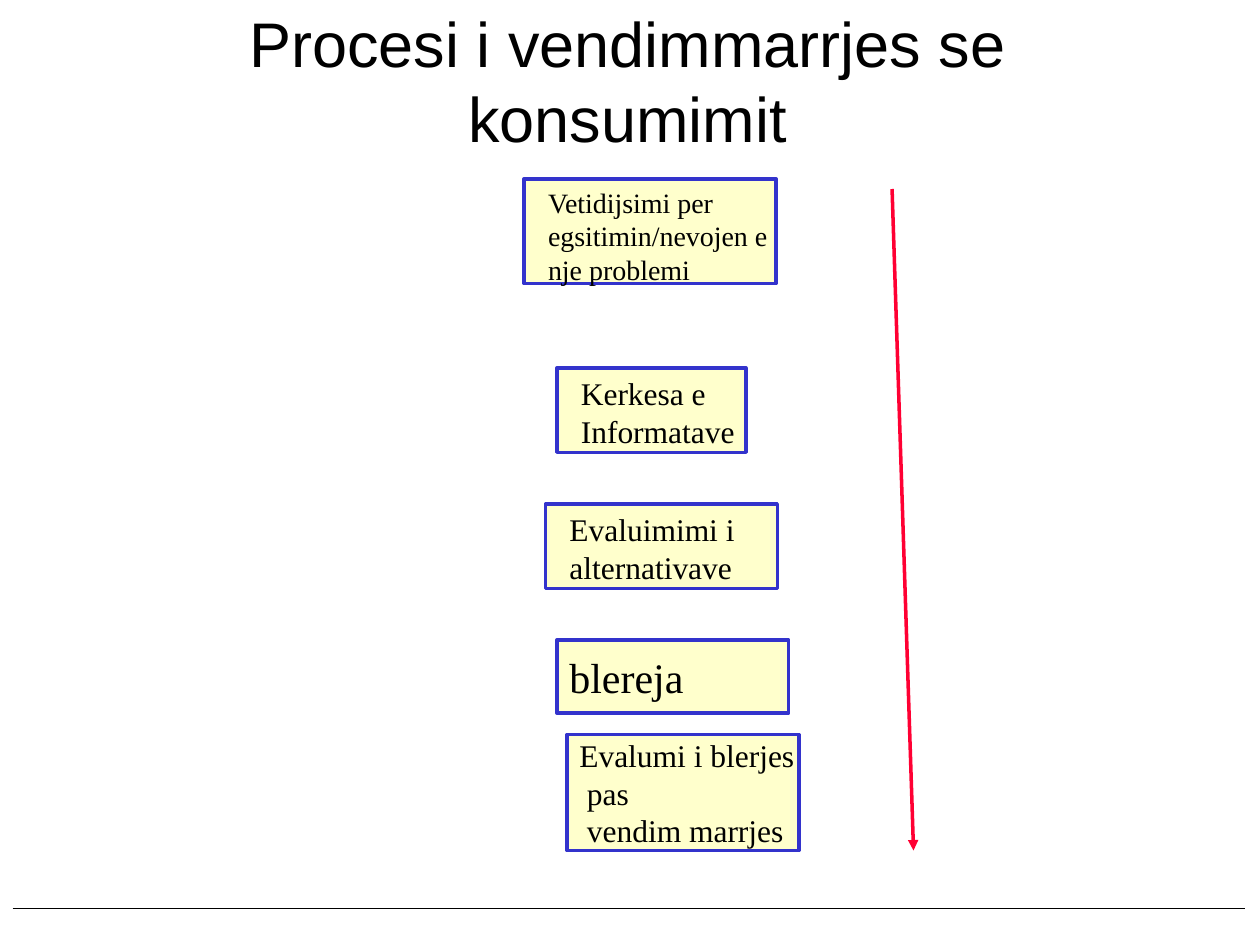
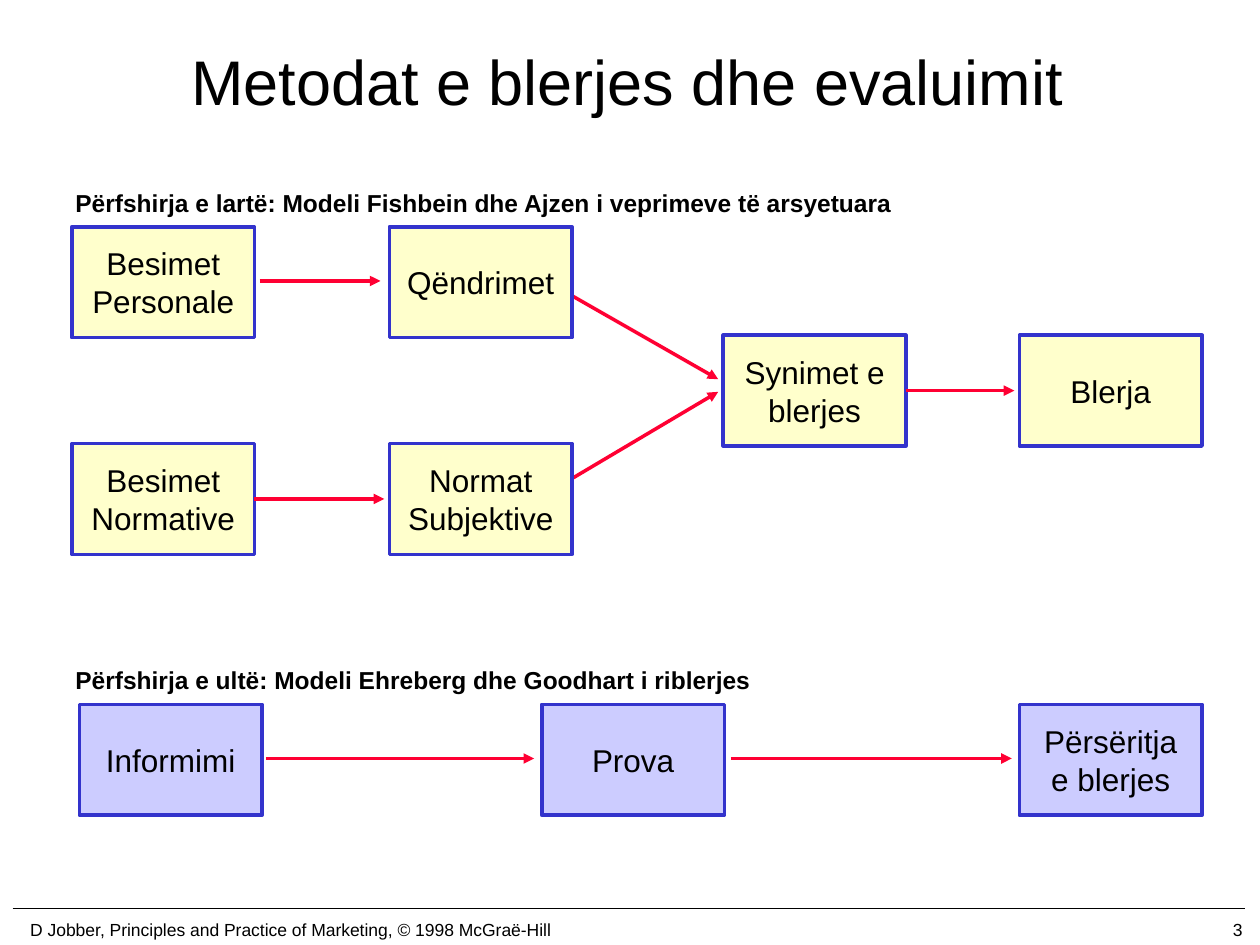
from lxml.etree import SubElement
from pptx import Presentation
from pptx.dml.color import RGBColor
from pptx.enum.shapes import MSO_CONNECTOR as Link, MSO_SHAPE as Shape
from pptx.enum.text import MSO_ANCHOR as Anchor, MSO_AUTO_SIZE as AutoSize, PP_ALIGN as Align
from pptx.oxml.ns import qn
from pptx.util import Inches, Pt

BLACK, RED, BLUE = "000000", "FF0033", "3333CC"
YELLOW, LILAC = "FFFFCC", "CCCCFF"
RIGHT_SIDE = 3
STEP_SIZE = (1.45, 0.88)


def colour(hex_value):
    return RGBColor.from_string(hex_value)


def inches(values):
    return [Inches(value) for value in values]


def apply(target, values):
    for name, value in values.items():
        setattr(target, name, value)


class Deck:
    def __init__(self):
        self.presentation = Presentation()
        apply(self.presentation, {"slide_width": Inches(10), "slide_height": Inches(7.5)})
        self.slide = None

    def add_slide(self, title):
        self.slide = self.presentation.slides.add_slide(self.presentation.slide_layouts[5])
        heading = self.slide.shapes.title
        self.place(heading, 0.73, 0.01, 8.5, 1.25)
        self.set_text(heading.text_frame, [title], size=36, align=Align.CENTER)

    def place(self, shape, *box):
        names = ("left", "top", "width", "height")
        apply(shape, dict(zip(names, inches(box))))

    def set_text(self, frame, lines, size=18, font="Arial", bold=False, align=Align.LEFT,
                 anchor=Anchor.MIDDLE, wrap=True, margins=(0.1, 0.05, 0.1, 0.05), indent=0):
        names = ("margin_left", "margin_top", "margin_right", "margin_bottom")
        apply(frame, dict(zip(names, inches(margins))))
        apply(frame, {"word_wrap": wrap, "auto_size": AutoSize.NONE, "vertical_anchor": anchor})
        for number, line in enumerate(lines):
            paragraph = frame.add_paragraph() if number else frame.paragraphs[0]
            paragraph.text = line
            paragraph.alignment = align
            if number and indent:
                paragraph._p.get_or_add_pPr().set("marL", str(Inches(indent)))
            apply(paragraph.font, {"size": Pt(size), "name": font, "bold": bold})
            paragraph.font.color.rgb = colour(BLACK)

    def label(self, text, box, **style):
        frame = self.slide.shapes.add_textbox(*inches(box)).text_frame
        self.set_text(frame, [text], wrap=False, **style)

    def box(self, lines, box, fill=YELLOW, **style):
        shape = self.slide.shapes.add_shape(Shape.RECTANGLE, *inches(box))
        shape.shadow.inherit = False
        shape.fill.solid()
        shape.fill.fore_color.rgb = colour(fill)
        shape.line.color.rgb = colour(BLUE)
        shape.line.width = Pt(2)
        self.set_text(shape.text_frame, lines, **style)
        return shape

    def line(self, start, end, stroke=BLACK, width=1):
        line = self.slide.shapes.add_connector(Link.STRAIGHT, *inches(start + end))
        line.line.color.rgb = colour(stroke)
        line.line.width = Pt(width)
        SubElement(line.element.spPr, qn("a:effectLst"))
        return line

    def arrow(self, start, end, source=None):
        arrow = self.line(start, end, RED, 2)
        SubElement(arrow.element.spPr.find(qn("a:ln")), qn("a:tailEnd"), type="triangle")
        if source is not None:
            arrow.begin_connect(source, RIGHT_SIDE)

    def master_rule(self):
        rule = self.line((0.1, 7.21), (9.88, 7.21))
        self.presentation.slide_master.shapes.element.append(rule.element)

    def footer(self, source, number):
        self.label(number, (7.88, 7.25, 2.08, 0.25), size=10, align=Align.RIGHT)
        self.label(source, (0, 7.25, 4.61, 0.25), size=10, align=Align.CENTER)


def decision_process(deck):
    deck.add_slide("Procesi i vendimmarrjes se konsumimit")
    deck.master_rule()
    upper = {"anchor": Anchor.TOP, "margins": (0.19, 0.05, 0, 0)}
    lower = {"margins": (0.1, 0.05, 0, 0.05)}
    stages = [
        (["Vetidijsimi per egsitimin/nevojen e nje problemi"],
         (4.16, 1.42, 2, 0.83), {"size": 16, **upper}),
        (["Kerkesa e", "Informatave"], (4.42, 2.92, 1.5, 0.67), upper),
        (["Evaluimimi i alternativave"], (4.33, 4, 1.84, 0.67), upper),
        (["blereja"], (4.42, 5.08, 1.84, 0.58), {"size": 24, **lower}),
        (["Evalumi i blerjes", "pas", "vendim marrjes"],
         (4.5, 5.83, 1.84, 0.92), {"indent": 0.06, **lower}),
    ]
    for lines, box, style in stages:
        deck.box(lines, box, font="Times New Roman", **style)
    deck.arrow((7.08, 1.5), (7.25, 6.75))


def purchase_models(deck):
    deck.add_slide("Metodat e blerjes dhe evaluimit")
    deck.footer("D Jobber, Principles and Practice of Marketing, © 1998 McGraë-Hill", "3")
    for model, top, width in (
        ("Përfshirja e lartë: Modeli Fishbein dhe Ajzen i veprimeve të arsyetuara", 1.44, 6.78),
        ("Përfshirja e ultë: Modeli Ehreberg dhe Goodhart i riblerjes", 5.23, 5.67),
    ):
        deck.label(model, (0.5, top, width, 0.33), size=14, bold=True)

    for start, end in (
        ((4.25, 3.97), (5.7, 3.11)),
        ((4.37, 2.25), (5.7, 3.01)),
        ((2.06, 2.23), (3.02, 2.23)),
        ((2.11, 6.02), (4.24, 6.02)),
        ((5.8, 6.02), (8.03, 6.02)),
    ):
        deck.arrow(start, end)

    attitude_row, intention_row, norm_row, repeat_row = 1.8, 2.66, 3.52, 5.59
    steps = {}
    for name, left, top, fill in (
        ("Besimet Personale", 0.57, attitude_row, YELLOW),
        ("Qëndrimet", 3.09, attitude_row, YELLOW),
        ("Besimet Normative", 0.57, norm_row, YELLOW),
        ("Normat Subjektive", 3.09, norm_row, YELLOW),
        ("Synimet e blerjes", 5.74, intention_row, YELLOW),
        ("Blerja", 8.09, intention_row, YELLOW),
        ("Informimi", 0.63, repeat_row, LILAC),
        ("Prova", 4.3, repeat_row, LILAC),
        ("Përsëritja e blerjes", 8.09, repeat_row, LILAC),
    ):
        steps[name] = deck.box([name], (left, top, *STEP_SIZE), fill, align=Align.CENTER)

    deck.arrow((2.02, 3.96), (3.05, 3.96), steps["Besimet Normative"])
    deck.arrow((7.19, 3.1), (8.05, 3.1), steps["Synimet e blerjes"])


def main():
    deck = Deck()
    decision_process(deck)
    purchase_models(deck)
    deck.presentation.save("out.pptx")


if __name__ == "__main__":
    main()
